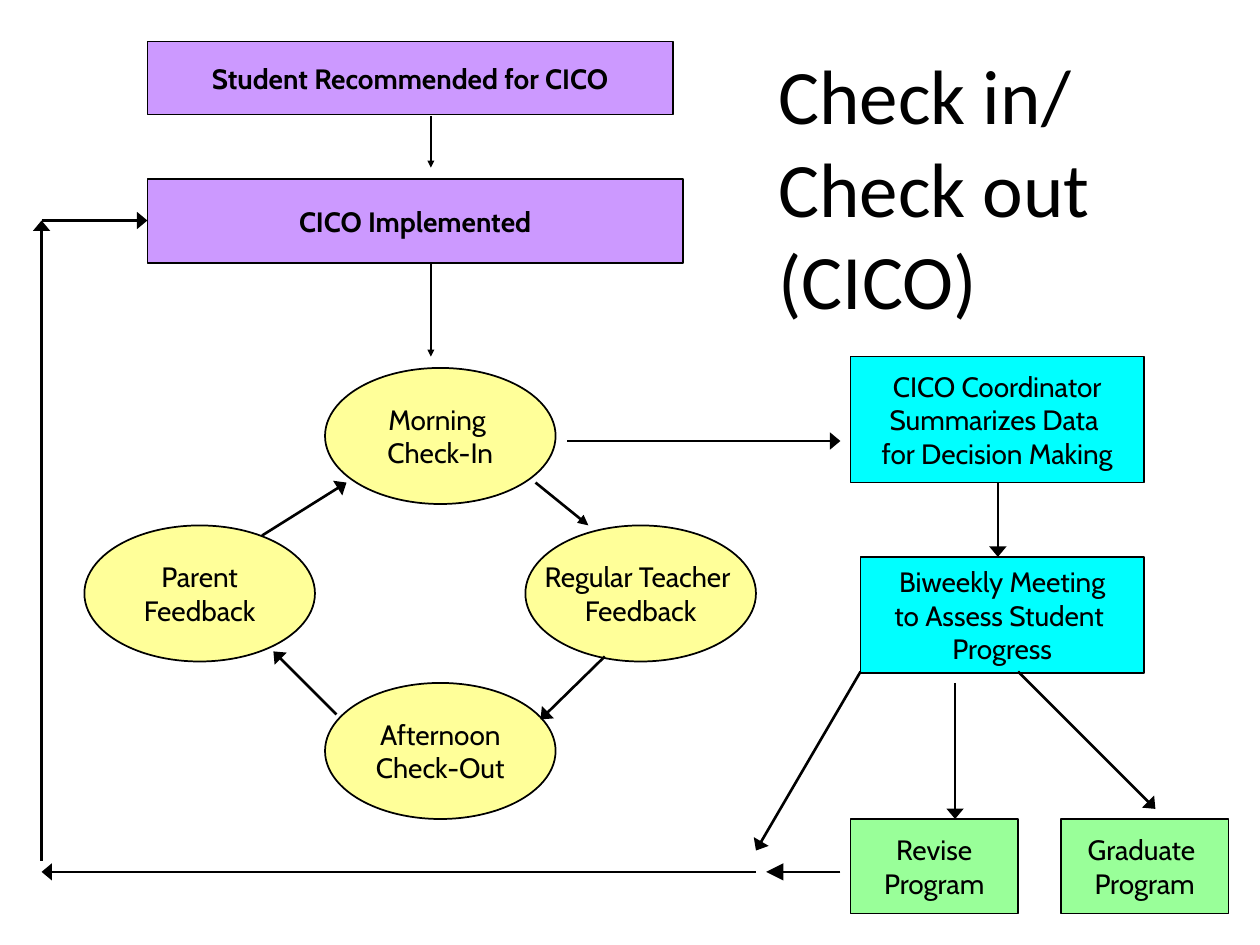
from dataclasses import dataclass

import pptx
import pptx.dml.color
import pptx.enum.shapes
import pptx.enum.text
import pptx.oxml
import pptx.oxml.ns
import pptx.util

Inches = pptx.util.Inches
Preset = pptx.enum.shapes.MSO_SHAPE
Align = pptx.enum.text.PP_ALIGN

COLORS = {
    "ink": "000000",
    "entry": "CC99FF",
    "cycle": "FFFF99",
    "review": "00FFFF",
    "outcome": "99FF99",
}


@dataclass
class Step:
    lines: list[str]
    left: float
    top: float
    width: float
    height: float
    color: str
    bold: bool = False


@dataclass
class Arrow:
    start: tuple[float, float]
    end: tuple[float, float]
    head_width: str = "lg"
    head_length: str = "med"


def cycle_step(lines: list[str], left: float, top: float) -> Step:
    return Step(lines, left, top, 1.83, 1.08, "cycle")


def outcome_step(lines: list[str], left: float) -> Step:
    return Step(lines, left, 6.5, 1.33, 0.75, "outcome")


STEPS = [
    Step(["Student Recommended for CICO"], 1.17, 0.33, 4.17, 0.58, "entry", True),
    Step(["CICO Implemented"], 1.17, 1.42, 4.25, 0.67, "entry", True),
    cycle_step(["Parent", "Feedback"], 0.67, 4.17),
    cycle_step(["Regular Teacher ", "Feedback"], 4.17, 4.17),
    cycle_step(["Afternoon", "Check-Out"], 2.58, 5.42),
    cycle_step(["Morning ", "Check-In"], 2.58, 2.92),
    Step(["CICO Coordinator", "Summarizes Data ", "for Decision Making"],
         6.75, 2.83, 2.33, 1, "review"),
    Step(["Biweekly Meeting", "to Assess Student ", "Progress"],
         6.83, 4.42, 2.25, 0.92, "review"),
    outcome_step(["Graduate ", "Program"], 8.42),
    outcome_step(["Revise", "Program"], 6.75),
]

ARROWS = [
    # Into the daily cycle
    Arrow((3.42, 0.92), (3.42, 1.33), "sm", "sm"),
    Arrow((3.42, 2.08), (3.42, 2.83), "sm", "sm"),
    # Around the daily cycle
    Arrow((4.25, 3.83), (4.67, 4.17), "med", "med"),
    Arrow((4.8, 5.21), (4.29, 5.71)),
    Arrow((2.67, 5.67), (2.17, 5.17)),
    Arrow((2.08, 4.25), (2.75, 3.83)),
    # Review and its outcomes
    Arrow((4.5, 3.5), (6.67, 3.5)),
    Arrow((7.92, 3.83), (7.92, 4.42)),
    Arrow((8.08, 5.33), (9.17, 6.42)),
    Arrow((7.58, 5.42), (7.58, 6.5)),
    Arrow((6.83, 5.33), (6, 6.75)),
    # Back to implementation
    Arrow((6.67, 6.92), (6.08, 6.92), "lg", "lg"),
    Arrow((6, 6.92), (0.33, 6.92)),
    Arrow((0.33, 6.83), (0.33, 1.75)),
    Arrow((0.33, 1.75), (1.17, 1.75)),
]


def rgb(name: str) -> pptx.dml.color.RGBColor:
    return pptx.dml.color.RGBColor.from_string(COLORS[name])


def write_text(frame, lines: list[str], *, font: str, size: float,
               bold: bool = False, align=Align.LEFT) -> None:
    for index, line in enumerate(lines):
        para = frame.paragraphs[0] if index == 0 else frame.add_paragraph()
        para.alignment = align
        span = para.add_run()
        span.text = line
        span.font.name = font
        span.font.size = pptx.util.Pt(size)
        span.font.bold = bold
        span.font.color.rgb = rgb("ink")


def draw_step(slide, step: Step) -> None:
    preset = Preset.OVAL if step.color == "cycle" else Preset.RECTANGLE
    box = slide.shapes.add_shape(preset, Inches(step.left), Inches(step.top),
                                 Inches(step.width), Inches(step.height))
    box.shadow.inherit = False
    box.fill.solid()
    box.fill.fore_color.rgb = rgb(step.color)
    box.line.color.rgb = rgb("ink")
    box.line.width = pptx.util.Pt(1)
    frame = box.text_frame
    frame.word_wrap = False
    frame.vertical_anchor = pptx.enum.text.MSO_ANCHOR.MIDDLE
    write_text(frame, step.lines, font="Cabin", size=16, bold=step.bold,
               align=Align.CENTER)


def draw_arrow(slide, arrow: Arrow) -> None:
    ends = [Inches(value) for value in (*arrow.start, *arrow.end)]
    line = slide.shapes.add_connector(
        pptx.enum.shapes.MSO_CONNECTOR.STRAIGHT, *ends)
    line.line.color.rgb = rgb("ink")
    line.line.width = pptx.util.Pt(1.5)
    properties = line._element.spPr
    properties.append(pptx.oxml.parse_xml(
        f'<a:effectLst {pptx.oxml.ns.nsdecls("a")}/>'))
    outline = properties.find(pptx.oxml.ns.qn("a:ln"))
    outline.append(pptx.oxml.parse_xml(
        f'<a:tailEnd {pptx.oxml.ns.nsdecls("a")} type="triangle" '
        f'w="{arrow.head_width}" len="{arrow.head_length}"/>'))


def draw_title(slide) -> None:
    box = slide.shapes.add_textbox(Inches(6.08), Inches(0.33),
                                   Inches(3.33), Inches(2.32))
    box.text_frame.word_wrap = True
    box.text_frame.auto_size = pptx.enum.text.MSO_AUTO_SIZE.SHAPE_TO_FIT_TEXT
    write_text(box.text_frame, ["Check in/ Check out (CICO)"],
               font="Calibri", size=44)


def main() -> None:
    deck = pptx.Presentation()
    deck.slide_width = Inches(10)
    deck.slide_height = Inches(7.5)
    page = deck.slides.add_slide(deck.slide_layouts[6])
    for step in STEPS:
        draw_step(page, step)
    for arrow in ARROWS:
        draw_arrow(page, arrow)
    draw_title(page)
    deck.save("out.pptx")


if __name__ == "__main__":
    main()
